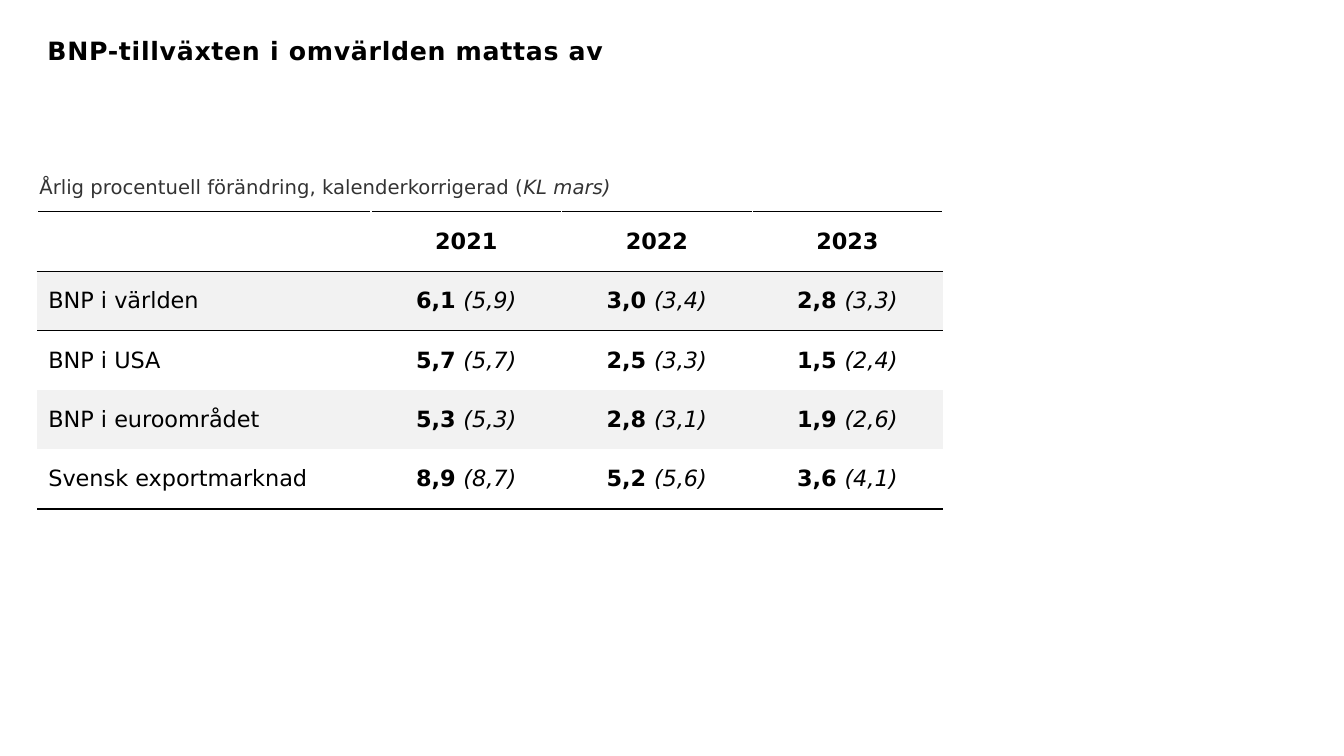
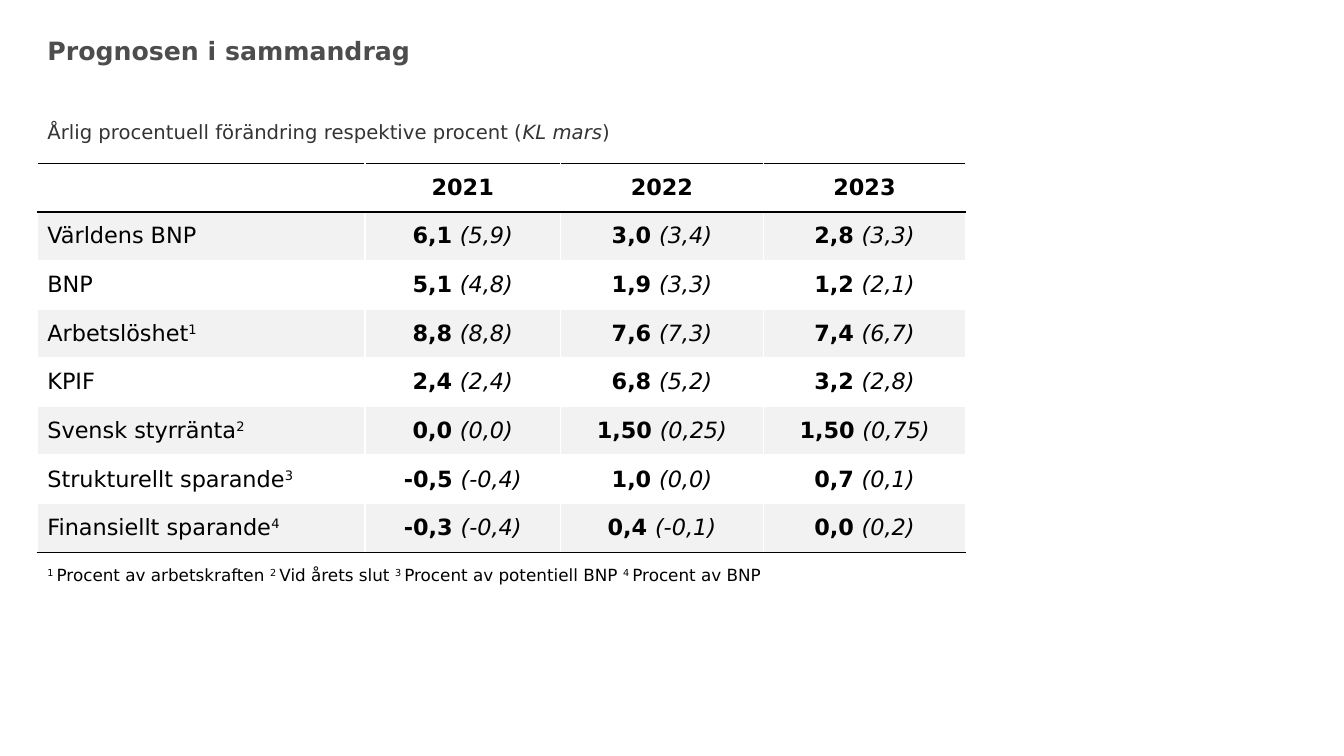
from lxml import etree
from pptx import Presentation
from pptx.dml.color import RGBColor
from pptx.enum.text import MSO_ANCHOR, MSO_AUTO_SIZE, PP_ALIGN
from pptx.oxml.ns import qn
from pptx.util import Inches, Pt

TOP, MIDDLE, BOTTOM = MSO_ANCHOR.TOP, MSO_ANCHOR.MIDDLE, MSO_ANCHOR.BOTTOM
LEFT, CENTER = PP_ALIGN.LEFT, PP_ALIGN.CENTER
NO_AUTOFIT = MSO_AUTO_SIZE.NONE
NO_STYLE_NO_GRID = "{2D5ABB26-0587-4C30-8999-92F81FD0307C}"

FONT = "DejaVu Sans"
COLORS = {
    "black": "000000",
    "white": "FFFFFF",
    "band": "F2F2F2",
    "caption": "333333",
    "gray_title": "4D4D4D",
}
MARGIN = 0.37
BOX_WIDTH = 9.47
BOX_HEIGHT = 0.55
TITLE_TOP = 0.3
YEARS = ["2021", "2022", "2023"]

SLIDES = [
    {
        "layout": "Title and Content",
        "title": "BNP-tillväxten i omvärlden mattas av",
        "title_format": {"color": "black", "spacing": 0.5},
        "title_width": 11.42,
        "texts": [
            {
                "runs": [
                    ("Årlig procentuell förändring, kalenderkorrigerad (", ""),
                    ("KL mars)", "italic"),
                ],
                "box": (0.29, 1.47, BOX_WIDTH, BOX_HEIGHT),
                "format": {"size": 14, "color": "caption", "anchor": BOTTOM},
            },
        ],
        "table": {
            "top": 2.1,
            "columns": [3.31, 1.89, 1.89, 1.89],
            "row_height": 0.59,
            "body_grid": False,
            "side_inset": 0.11,
            "rows": [
                ("BNP i världen", "", ["6,1 (5,9)", "3,0 (3,4)", "2,8 (3,3)"]),
                ("BNP i USA", "", ["5,7 (5,7)", "2,5 (3,3)", "1,5 (2,4)"]),
                ("BNP i euroområdet", "", ["5,3 (5,3)", "2,8 (3,1)", "1,9 (2,6)"]),
                ("Svensk exportmarknad", "", ["8,9 (8,7)", "5,2 (5,6)", "3,6 (4,1)"]),
            ],
        },
    },
    {
        "layout": "Two Content",
        "title": "Prognosen i sammandrag",
        "title_format": {"color": "gray_title"},
        "title_width": BOX_WIDTH,
        "texts": [
            {
                "runs": [
                    ("Årlig procentuell förändring respektive procent (", ""),
                    ("KL mars", "italic"),
                    (")", ""),
                ],
                "box": (MARGIN, 0.92, BOX_WIDTH, BOX_HEIGHT),
                "format": {"size": 14, "color": "caption", "anchor": BOTTOM},
            },
            {
                "runs": [
                    ("1 ", "superscript"),
                    ("Procent av arbetskraften ", ""),
                    ("2 ", "superscript"),
                    ("Vid årets slut ", ""),
                    ("3 ", "superscript"),
                    ("Procent av potentiell BNP ", ""),
                    ("4 ", "superscript"),
                    ("Procent av BNP", ""),
                ],
                "box": (MARGIN, 5.55, BOX_WIDTH, 0.68),
                "format": {"size": 12, "color": "black"},
            },
        ],
        "table": {
            "top": 1.62,
            "columns": [3.25, 1.94, 2.01, 2.01],
            "row_height": 0.4825,
            "body_grid": True,
            "side_inset": 0.1,
            "rows": [
                ("Världens BNP", "", ["6,1 (5,9)", "3,0 (3,4)", "2,8 (3,3)"]),
                ("BNP", "", ["5,1 (4,8)", "1,9 (3,3)", "1,2 (2,1)"]),
                ("Arbetslöshet", "1", ["8,8 (8,8)", "7,6 (7,3)", "7,4 (6,7)"]),
                ("KPIF", "", ["2,4 (2,4)", "6,8 (5,2)", "3,2 (2,8)"]),
                ("Svensk styrränta", "2", ["0,0 (0,0)", "1,50 (0,25)", "1,50 (0,75)"]),
                ("Strukturellt sparande", "3", ["-0,5 (-0,4)", "1,0 (0,0)", "0,7 (0,1)"]),
                ("Finansiellt sparande", "4", ["-0,3 (-0,4)", "0,4 (-0,1)", "0,0 (0,2)"]),
            ],
        },
    },
]


def color(name):
    return RGBColor.from_string(COLORS[name])


def write_runs(paragraph, runs, size=16, color_name="black", align=LEFT, spacing=0):
    paragraph.alignment = align
    for text, style in runs:
        run = paragraph.add_run()
        run.text = text
        run.font.name = FONT
        run.font.size = Pt(size)
        run.font.color.rgb = color(color_name)
        run.font.bold = style == "bold"
        run.font.italic = style == "italic"
        properties = run._r.get_or_add_rPr()
        if style == "superscript":
            properties.set("baseline", "30000")
        if spacing:
            properties.set("spc", str(round(spacing * 100)))


def fill_placeholder(shape, runs, box, **text_format):
    shape.left, shape.top, shape.width, shape.height = map(Inches, box)
    frame = shape.text_frame
    frame.word_wrap = True
    frame.auto_size = NO_AUTOFIT
    frame.vertical_anchor = text_format.get("anchor", TOP)
    paragraph = frame.paragraphs[0]
    properties = paragraph._p.get_or_add_pPr()
    properties.set("marL", "0")
    properties.set("indent", "0")
    etree.SubElement(properties, qn("a:buNone"))
    paragraph.space_before = Pt(0)
    write_runs(
        paragraph,
        runs,
        size=text_format["size"],
        color_name=text_format["color"],
        spacing=text_format.get("spacing", 0),
    )


def set_borders(cell, borders):
    properties = cell._tc.get_or_add_tcPr()
    drawn = [(side, borders[side]) for side in "LRTB" if side in borders]
    for position, (side, name) in enumerate(drawn):
        line = etree.Element(qn(f"a:ln{side}"), w=str(Pt(1)))
        fill = etree.SubElement(line, qn("a:solidFill"))
        etree.SubElement(fill, qn("a:srgbClr"), val=COLORS[name])
        properties.insert(position, line)


def cell_borders(row, last_row, body_grid):
    borders = dict.fromkeys("LRTB", "white") if body_grid or row == 0 else {}
    if row <= 1:
        borders["T"] = "black"
    if row in (0, last_row):
        borders["B"] = "black"
    return borders


def table_runs(rows):
    yield [[]] + [[(year, "bold")] for year in YEARS]
    for label, note, values in rows:
        cells = [[(label, "")] + ([(note, "superscript")] if note else [])]
        for value in values:
            current, previous = value.split(" ")
            cells.append([(current + " ", "bold"), (previous, "italic")])
        yield cells


def add_forecast_table(slide, top, columns, row_height, body_grid, side_inset, rows):
    last_row = len(rows)
    shape = slide.shapes.add_table(
        last_row + 1, len(columns), Inches(MARGIN), Inches(top),
        Inches(sum(columns)), Inches(row_height * (last_row + 1)),
    )
    table = shape.table
    table._tbl.tblPr.find(qn("a:tableStyleId")).text = NO_STYLE_NO_GRID
    table.first_row = table.horz_banding = False
    for column, width in zip(table.columns, columns):
        column.width = Inches(width)
    for row, row_runs in enumerate(table_runs(rows)):
        table.rows[row].height = Inches(row_height)
        for column, runs in enumerate(row_runs):
            cell = table.cell(row, column)
            cell.vertical_anchor = MIDDLE
            cell.margin_left = cell.margin_right = Inches(side_inset)
            cell.fill.solid()
            cell.fill.fore_color.rgb = color("band" if row % 2 else "white")
            set_borders(cell, cell_borders(row, last_row, body_grid))
            write_runs(cell.text_frame.paragraphs[0], runs, align=CENTER if column else LEFT)


def add_slide(presentation, content):
    layout = presentation.slide_layouts.get_by_name(content["layout"])
    slide = presentation.slides.add_slide(layout)
    fill_placeholder(
        slide.shapes.title,
        [(content["title"], "bold")],
        (MARGIN, TITLE_TOP, content["title_width"], BOX_HEIGHT),
        size=18,
        **content["title_format"],
    )
    for index, text in enumerate(content["texts"], start=1):
        fill_placeholder(slide.placeholders[index], text["runs"], text["box"], **text["format"])
    add_forecast_table(slide, **content["table"])


def main():
    presentation = Presentation()
    presentation.slide_width = Inches(13.33)
    presentation.slide_height = Inches(7.5)
    for content in SLIDES:
        add_slide(presentation, content)
    presentation.save("out.pptx")


if __name__ == "__main__":
    main()
